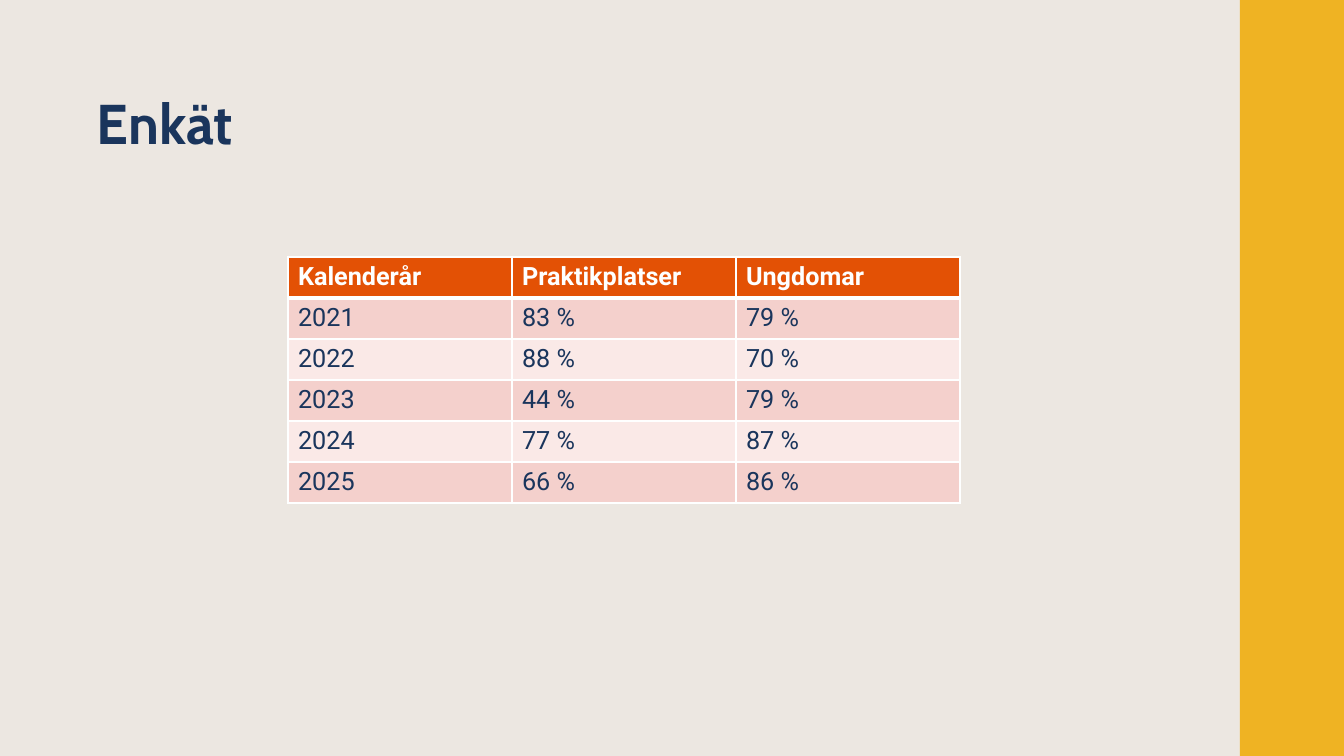
from lxml import etree
from pptx import Presentation
from pptx.dml.color import RGBColor
from pptx.enum.shapes import MSO_SHAPE
from pptx.enum.text import MSO_ANCHOR, PP_ALIGN
from pptx.oxml.ns import qn
from pptx.util import Emu, Pt

RECTANGLE = MSO_SHAPE.RECTANGLE
BOTTOM = MSO_ANCHOR.BOTTOM
LEFT = PP_ALIGN.LEFT

TITLE = "Enkät"
ROWS = [
    ("Kalenderår", "Praktikplatser", "Ungdomar"),
    ("2021", "83 %", "79 %"),
    ("2022", "88 %", "70 %"),
    ("2023", "44 %", "79 %"),
    ("2024", "77 %", "87 %"),
    ("2025", "66 %", "86 %"),
]

SLIDE_W, SLIDE_H = 1344, 756
BAND_X = 1240
TITLE_BOX = (97, 96, 1055, 61)
TABLE_X, TABLE_Y = 288, 257
COL_W, ROW_H = 224, 41

BACKGROUND, YELLOW, NAVY, WHITE = "ECE7E1", "EFB323", "1A355C", "FEFFFF"
HEADER_FILL = "E35105"
BODY_FILLS = ("FAE9E7", "F4D0CC")
TITLE_FONT, TABLE_FONT = "Cabin", "Roboto"


def px(n):
    return Emu(round(n * 914400 / 100.8))


def paint(fill, color):
    fill.solid()
    fill.fore_color.rgb = RGBColor.from_string(color)


def style(p, font, size, color, bold):
    for r in p.runs:
        r.font.name = font
        r.font.size = Pt(size)
        r.font.bold = bold
        r.font.color.rgb = RGBColor.from_string(color)


def add_border(cell, side, width):
    tcPr = cell._tc.get_or_add_tcPr()
    ln = etree.SubElement(tcPr, qn("a:ln" + side), w=str(Pt(width)))
    solid = etree.SubElement(ln, qn("a:solidFill"))
    etree.SubElement(solid, qn("a:srgbClr"), val=WHITE)


def format_cell(cell, row, text):
    header = row == 0
    cell.text = text
    style(cell.text_frame.paragraphs[0], TABLE_FONT, 18,
          WHITE if header else NAVY, header)
    widths = {"L": 1, "R": 1, "T": 3 if row == 1 else 1, "B": 3 if header else 1}
    for side, width in widths.items():
        add_border(cell, side, width)
    paint(cell.fill, HEADER_FILL if header else BODY_FILLS[row % 2])


def main():
    prs = Presentation()
    prs.slide_width, prs.slide_height = px(SLIDE_W), px(SLIDE_H)
    s = prs.slides.add_slide(prs.slide_layouts[5])
    paint(s.background.fill, BACKGROUND)

    sp = s.shapes.add_shape(RECTANGLE, px(BAND_X), 0,
                            px(SLIDE_W - BAND_X), px(SLIDE_H))
    sp.shadow.inherit = False
    paint(sp.fill, YELLOW)
    sp.line.fill.background()

    title = s.shapes.title
    title.left, title.top, title.width, title.height = map(px, TITLE_BOX)
    tf = title.text_frame
    tf.text = TITLE
    tf.word_wrap = True
    tf.vertical_anchor = BOTTOM
    tf.margin_left = tf.margin_top = tf.margin_right = tf.margin_bottom = 0
    p = tf.paragraphs[0]
    p.alignment = LEFT
    p.line_spacing = 0.9
    style(p, TITLE_FONT, 40, NAVY, True)

    n_rows, n_cols = len(ROWS), len(ROWS[0])
    table = s.shapes.add_table(n_rows, n_cols, px(TABLE_X), px(TABLE_Y),
                               px(COL_W * n_cols), px(ROW_H * n_rows)).table
    for col in table.columns:
        col.width = px(COL_W)
    for i, values in enumerate(ROWS):
        table.rows[i].height = px(ROW_H)
        for j, text in enumerate(values):
            format_cell(table.cell(i, j), i, text)

    prs.save("out.pptx")


if __name__ == "__main__":
    main()
